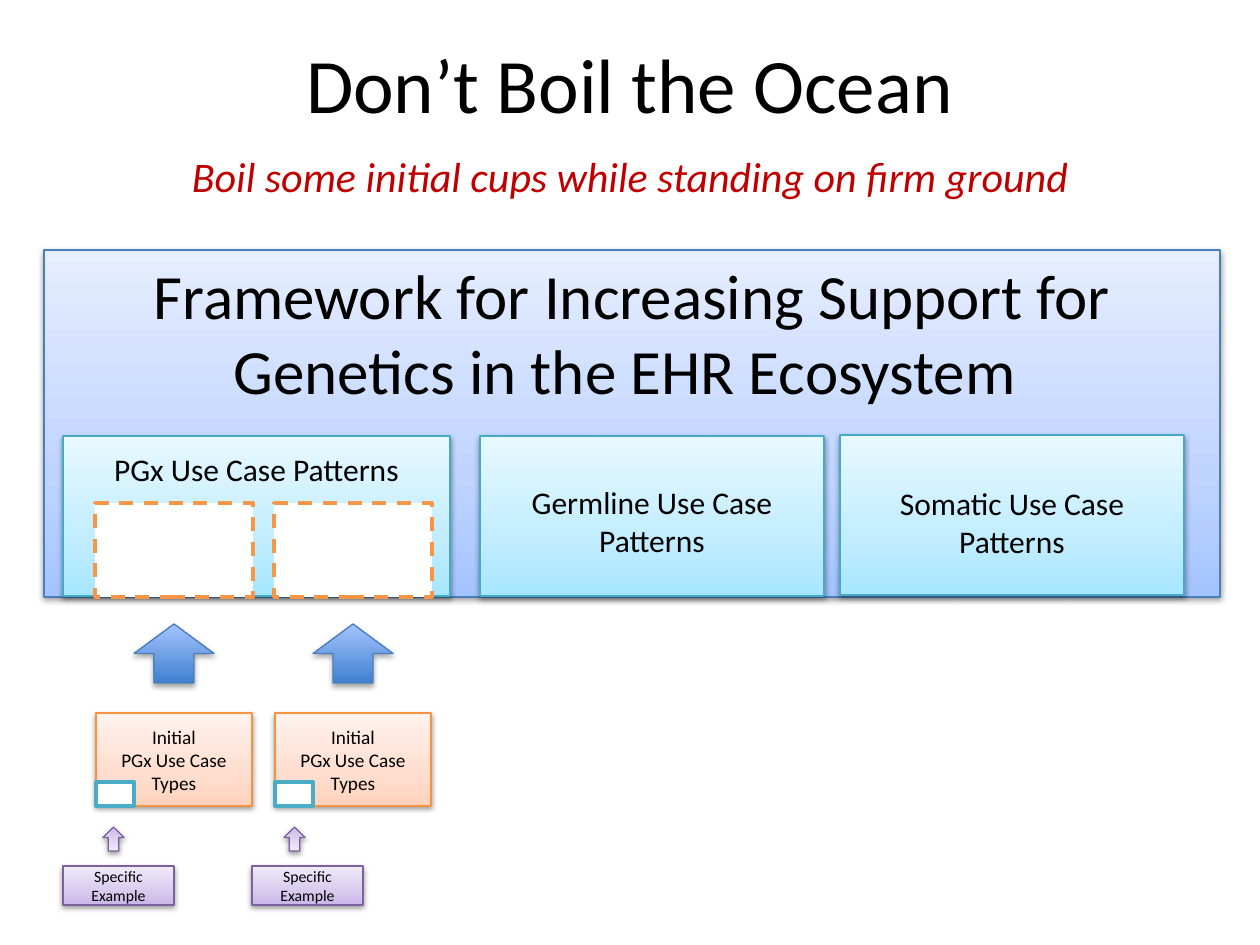
from lxml.etree import SubElement
from pptx import Presentation
from pptx.dml.color import RGBColor
from pptx.enum.dml import MSO_LINE
from pptx.enum.shapes import MSO_SHAPE
from pptx.enum.text import MSO_ANCHOR, PP_ALIGN
from pptx.oxml.ns import qn
from pptx.util import Pt

PX = 914400 / 126
COLORS = {"text": "000000", "accent": "C00000", "white": "FFFFFF",
          "slot": "F79646", "chip": "4BACC6"}
THEMES = {
    "blue": ("4B7EBC", [(0, "A4C4FF"), (35, "BFD4FF"), (100, "E6EEFF")]),
    "aqua": ("46AAC5", [(0, "A7E6FF"), (35, "C1EDFF"), (100, "E7F8FF")]),
    "orange": ("F69240", [(0, "FFD2BD"), (35, "FFDED0"), (100, "FFF2ED")]),
    "purple": ("7D60A0", [(0, "C9B5E8"), (35, "D8CBEE"), (100, "F0EAF9")]),
    "arrow": ("4B7EBC", [(0, "3F80CE"), (100, "A4C4FF")]),
}

presentation = Presentation()
presentation.slide_width = round(1260 * PX)
presentation.slide_height = round(945 * PX)
slide = presentation.slides.add_slide(presentation.slide_layouts[6])


def add_text(box, text, size, color="text", italic=None, anchor=MSO_ANCHOR.TOP):
    shape = box
    if isinstance(box, tuple):
        shape = slide.shapes.add_textbox(*[round(value * PX) for value in box])
    frame = shape.text_frame
    frame.word_wrap = True
    frame.vertical_anchor = anchor
    paragraph = frame.paragraphs[0]
    paragraph.text = text
    paragraph.alignment = PP_ALIGN.CENTER
    paragraph.font.name = "Calibri"
    paragraph.font.size = Pt(size)
    paragraph.font.italic = italic
    paragraph.font.color.rgb = RGBColor.from_string(COLORS[color])


def add_box(box, theme=None, kind=MSO_SHAPE.RECTANGLE, outline=None):
    shape = slide.shapes.add_shape(kind, *[round(value * PX) for value in box])
    shape.shadow.inherit = False
    if theme is None:
        shape.fill.solid()
        shape.fill.fore_color.rgb = RGBColor.from_string(COLORS["white"])
        shape.line.color.rgb = RGBColor.from_string(COLORS[outline])
        shape.line.width = Pt(2)
        return shape
    line_color, stops = THEMES[theme]
    shape.line.color.rgb = RGBColor.from_string(line_color)
    shape.line.width = Pt(0.75)
    shape.fill.gradient()
    shape.fill.gradient_angle = 90
    properties = shape._element.spPr
    stop_list = properties.find(".//" + qn("a:gsLst"))
    stop_list.clear()
    for position, color in stops:
        stop = SubElement(stop_list, qn("a:gs"), pos=str(position * 1000))
        SubElement(stop, qn("a:srgbClr"), val=color)
    distance, alpha = ("23000", "35000") if theme == "arrow" else ("20000", "38000")
    shadow = SubElement(properties.find(qn("a:effectLst")), qn("a:outerShdw"),
                        blurRad="40000", dist=distance, dir="5400000", rotWithShape="0")
    shadow_color = SubElement(shadow, qn("a:srgbClr"), val="000000")
    SubElement(shadow_color, qn("a:alpha"), val=alpha)
    return shape


framework = add_box((44, 250, 1176, 347), "blue")
add_text(framework, "Framework for Increasing Support for Genetics in the EHR Ecosystem ", 36)
add_text((63, 4, 1134, 158), "Don’t Boil the Ocean", 44, anchor=MSO_ANCHOR.MIDDLE)
add_text((63, 144, 1134, 63), "Boil some initial cups while standing on firm ground", 24,
         color="accent", italic=True)

patterns = [
    ("PGx", 63, 436, 387, 444),
    ("Germline", 480, 436, 344, 477),
    ("Somatic", 840, 435, 344, 478),
]
for name, left, top, width, text_top in patterns:
    add_box((left, top, width, 160), "aqua")
    add_text((left, text_top, width, 50 if name == "PGx" else 89),
             f"{name} Use Case Patterns", 18)

for left, example_left, pointer_left in [(96, 63, 103), (275, 252, 284)]:
    slot = add_box((left - 1, 503, 158, 94), outline="slot")
    slot.line.dash_style = MSO_LINE.DASH
    add_box((left + 38, 624, 80, 59), "arrow", MSO_SHAPE.UP_ARROW)
    use_case = add_box((left, 713, 156, 93), "orange")
    add_text(use_case, "Initial\nPGx Use Case Types", 11, anchor=MSO_ANCHOR.MIDDLE)
    add_box((left, 782, 38, 24), outline="chip")
    pointer = add_box((pointer_left, 827, 21, 24), "purple", MSO_SHAPE.DOWN_ARROW)
    pointer.rotation = 180
    example = add_box((example_left, 866, 111, 39), "purple")
    add_text(example, "Specific Example", 9, anchor=MSO_ANCHOR.MIDDLE)

presentation.save("out.pptx")
